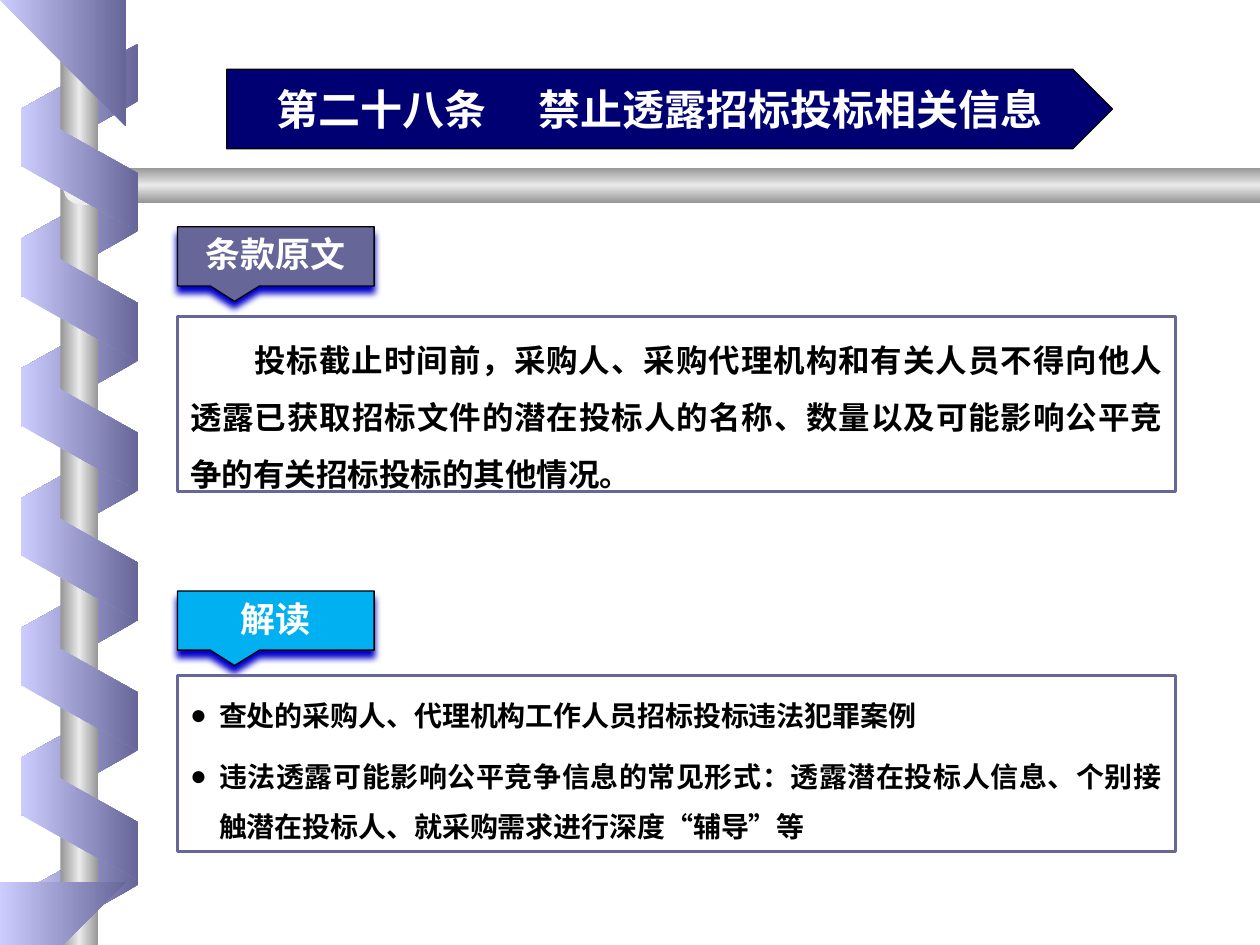
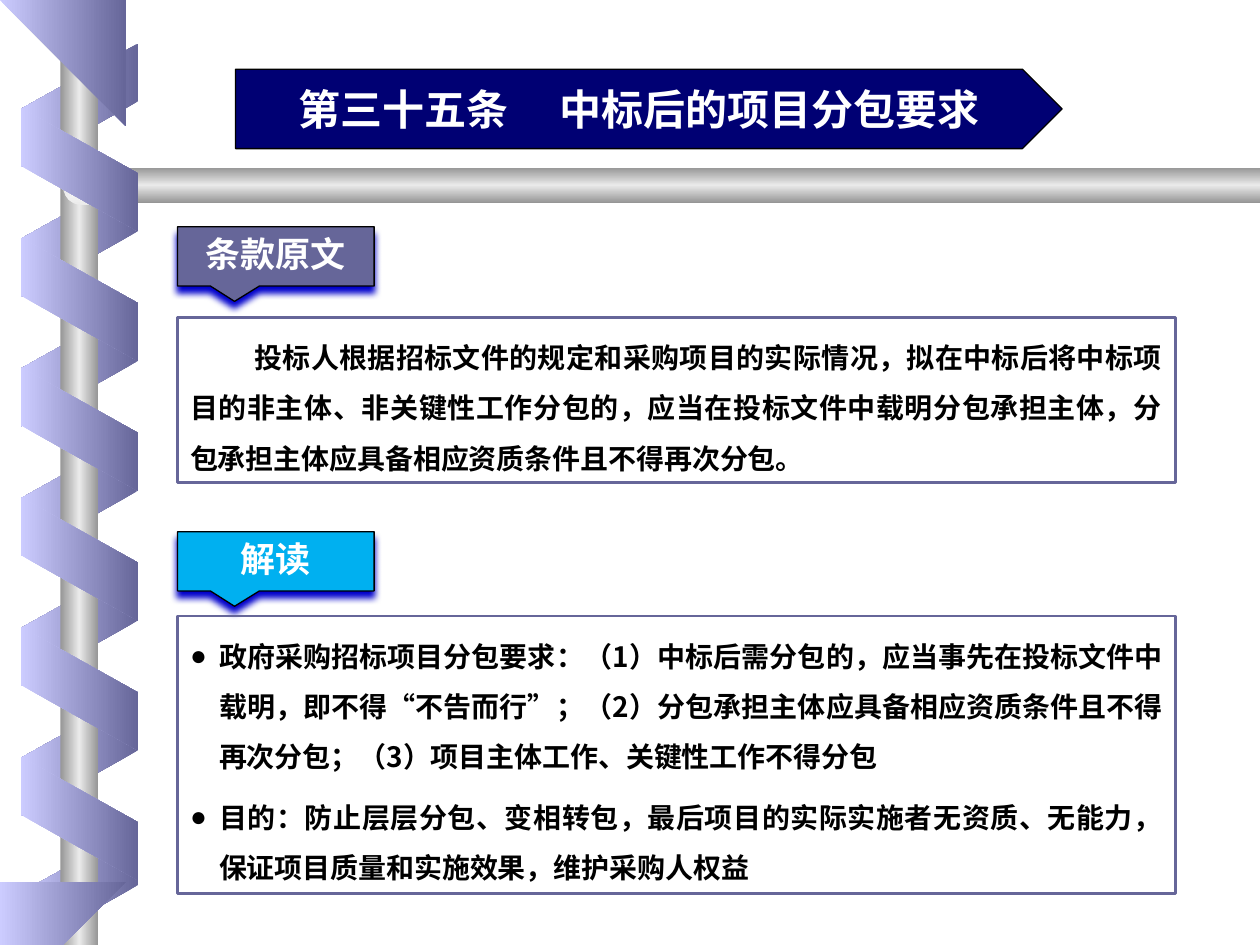
from pptx import Presentation
from pptx.dml.color import RGBColor
from pptx.enum.shapes import MSO_SHAPE as Shape
from pptx.enum.text import MSO_ANCHOR as Anchor, PP_ALIGN as Align
from pptx.oxml.ns import qn
from pptx.util import Inches, Pt
from lxml.etree import SubElement as Sub

# Content: title parts, clause text and size, notes; tops and heights in inches
PAGES = [
    dict(title=("第二十八条", "禁止透露招标投标相关信息"), banner=(1.8, 7.03),
         clause="投标截止时间前，采购人、采购代理机构和有关人员不得向他人透露已获取招标文件的潜在投标人"
                "的名称、数量以及可能影响公平竞争的有关招标投标的其他情况。",
         size="large", clause_box=(2.51, 1.39), tag_top=4.69, note_height=1.4,
         notes=["查处的采购人、代理机构工作人员招标投标违法犯罪案例",
                "违法透露可能影响公平竞争信息的常见形式：透露潜在投标人信息、个别接触潜在投标人、"
                "就采购需求进行深度“辅导”等"]),
    dict(title=("第三十五条", "中标后的项目分包要求"), banner=(1.87, 6.56),
         clause="投标人根据招标文件的规定和采购项目的实际情况，拟在中标后将中标项目的非主体、非关键性工作"
                "分包的，应当在投标文件中载明分包承担主体，分包承担主体应具备相应资质条件且不得再次分包。",
         size="body", clause_box=(2.52, 1.31), tag_top=4.22, note_height=2.2,
         notes=["政府采购招标项目分包要求：（1）中标后需分包的，应当事先在投标文件中载明，即不得"
                "“不告而行”；（2）分包承担主体应具备相应资质条件且不得再次分包；"
                "（3）项目主体工作、关键性工作不得分包",
                "目的：防止层层分包、变相转包，最后项目的实际实施者无资质、无能力，"
                "保证项目质量和实施效果，维护采购人权益"]),
]
CLAUSE_TAG, NOTE_TAG = "条款原文", "解读"


class Theme:
    navy, slate, lilac, sky = "000073", "666699", "CCCCFF", "00B0F0"
    white, black, glow = "FFFFFF", "000000", "0000CC"
    steel, shine, pearl = "969696", "EAEAEA", "FEFFFF"
    serif, sans = "Times New Roman", "Noto Sans CJK SC"
    sizes = dict(title=24, tag=20, large=18, body=16)


# Grid
WIDE, HIGH = 10, 7.5
LEFT, SPAN = 1.41, 7.92
TAG_TOP, TAG_GAP = 1.8, 0.67
RIBBON, PITCH = (0.14, 0.98, 0.93), 1.03
METAL = [Theme.steel, Theme.shine, Theme.steel]
FOLD = [Theme.lilac, Theme.slate]


def rgb(code):
    return RGBColor.from_string(code)


def blend(shape, stops, angle=0, centre=False):
    """Fill with evenly spaced gradient stops, linear or from the centre."""
    shape.fill.gradient()
    shape.fill.gradient_angle = angle
    grad = shape._element.spPr.find(qn("a:gradFill"))
    grad.set("rotWithShape", "0")
    row = grad.find(qn("a:gsLst"))
    for old in list(row):
        row.remove(old)
    for i, code in enumerate(stops):
        stop = Sub(row, qn("a:gs"), pos=str(100000 * i // (len(stops) - 1)))
        Sub(stop, qn("a:srgbClr"), val=code)
    if centre:
        grad.remove(grad.find(qn("a:lin")))
        way = Sub(grad, qn("a:path"), path="shape")
        Sub(way, qn("a:fillToRect"), l="50000", t="50000", r="50000", b="50000")


def style(shape, fill=None, line=None, width=0.75):
    shape.shadow.inherit = False
    if fill:
        shape.fill.solid()
        shape.fill.fore_color.rgb = rgb(fill)
    else:
        shape.fill.background()
    if line:
        shape.line.color.rgb = rgb(line)
        shape.line.width = Pt(width)
    else:
        shape.line.fill.background()
    return shape


def put(slide, kind, box, adj=(), turn=0, flip=False, **look):
    shape = slide.shapes.add_shape(kind, *map(Inches, box))
    for i, value in enumerate(adj):
        shape.adjustments[i] = value
    shape.rotation = turn
    if flip:
        shape._element.spPr.find(qn("a:xfrm")).set("flipH", "1")
    return style(shape, **look)


def write(shape, lines, size, font=Theme.serif, color=Theme.white, align=Align.CENTER,
          anchor=Anchor.TOP, spacing=None, before=0, margin=0, indent=0, bullet=None):
    """Each line is a text, or a tuple of texts set apart by a wide space."""
    frame = shape.text_frame
    frame.word_wrap = True
    frame.vertical_anchor = anchor
    for i, line in enumerate(lines):
        para = frame.add_paragraph() if i else frame.paragraphs[0]
        para.alignment, para.space_before = align, Pt(before)
        if spacing:
            para.line_spacing = spacing
        props = para._p.get_or_add_pPr()
        props.set("marL", str(Inches(margin)))
        props.set("indent", str(Inches(indent)))
        if bullet:
            Sub(props, qn("a:buFont"), typeface=Theme.serif)
            Sub(props, qn("a:buChar"), char=bullet)
        parts = [line] if isinstance(line, str) else [line[0], " ", line[1]]
        for part in parts:
            run = para.add_run()
            run.text = part
            run.font.size, run.font.bold, run.font.name = Pt(size), True, font
            run.font.color.rgb = rgb(color)
            props = run._r.get_or_add_rPr()
            Sub(props, qn("a:ea"), typeface=Theme.sans)
            if part == " ":
                props.set("spc", str(size * 100))


def ribbon(slide, top, turn, flip, stops):
    left, wide, high = RIBBON
    blend(put(slide, Shape.PARALLELOGRAM, (left, top, wide, high), [0.56], turn, flip), stops)


def outline(slide, points):
    build = slide.shapes.build_freeform(*points[0], scale=Inches(1))
    build.add_line_segments(points[1:], close=True)
    blend(style(build.convert_to_shape()), FOLD)


def frame(slide):
    # Back folds, post and rail
    for top in [0.37 + PITCH * i for i in range(6)] + [6.59]:
        ribbon(slide, top, 90, True, FOLD[::-1])
    blend(put(slide, Shape.RECTANGLE, (0.48, 0, 0.3, HIGH)), METAL)
    rail = put(slide, Shape.PENTAGON, (0.6, 1.33, WIDE - 0.6, 0.28), [0.59], flip=True)
    blend(rail, METAL, 90)
    knob = put(slide, Shape.OVAL, (0.5, 1.33, 0.32, 0.3))
    blend(knob, [Theme.pearl, Theme.shine], centre=True)
    # Front folds, with cut ends at the slide's edges
    for i in range(6):
        ribbon(slide, 0.88 + PITCH * i, 270, False, FOLD)
    outline(slide, [(0.17, 0), (0.17, 0.29), (1.09, 0.81), (1.09, 0.35), (0.47, 0)])
    outline(slide, [(0.96, 7.49), (0.17, 7.05), (0.16, HIGH)])


def tag(slide, text, top, fill):
    shape = put(slide, Shape.RECTANGULAR_CALLOUT, (LEFT, top, 1.56, 0.47),
                [-0.21, 0.76], fill=fill, line=Theme.black)
    effect = shape._element.spPr.find(qn("a:effectLst"))
    shade = Sub(effect, qn("a:outerShdw"), blurRad=str(Pt(4)), dist=str(Pt(4)),
                dir="5400000", algn="ctr", rotWithShape="0")
    Sub(shade, qn("a:srgbClr"), val=Theme.glow)
    write(shape, [text], Theme.sizes["tag"])


def panel(slide, lines, top, high, size, **form):
    shape = put(slide, Shape.RECTANGLE, (LEFT, top, SPAN, high), line=Theme.slate, width=1.5)
    write(shape, lines, Theme.sizes[size], font=Theme.sans, color=Theme.black,
          align=Align.JUSTIFY, spacing=1.5, **form)


def page(deck, data):
    slide = deck.slides.add_slide(deck.slide_layouts[6])
    frame(slide)
    panel(slide, [data["clause"]], *data["clause_box"], data["size"], indent=0.51)
    left, wide = data["banner"]
    banner = put(slide, Shape.PENTAGON, (left, 0.55, wide, 0.63),
                 fill=Theme.navy, line=Theme.black)
    write(banner, [data["title"]], Theme.sizes["title"], anchor=Anchor.MIDDLE)
    tag(slide, CLAUSE_TAG, TAG_TOP, Theme.slate)
    tag(slide, NOTE_TAG, data["tag_top"], Theme.sky)
    panel(slide, data["notes"], data["tag_top"] + TAG_GAP, data["note_height"], "body",
          before=6, margin=0.23, indent=-0.23, bullet="●")


def main():
    deck = Presentation()
    deck.slide_width, deck.slide_height = Inches(WIDE), Inches(HIGH)
    for data in PAGES:
        page(deck, data)
    deck.save("out.pptx")


if __name__ == "__main__":
    main()
